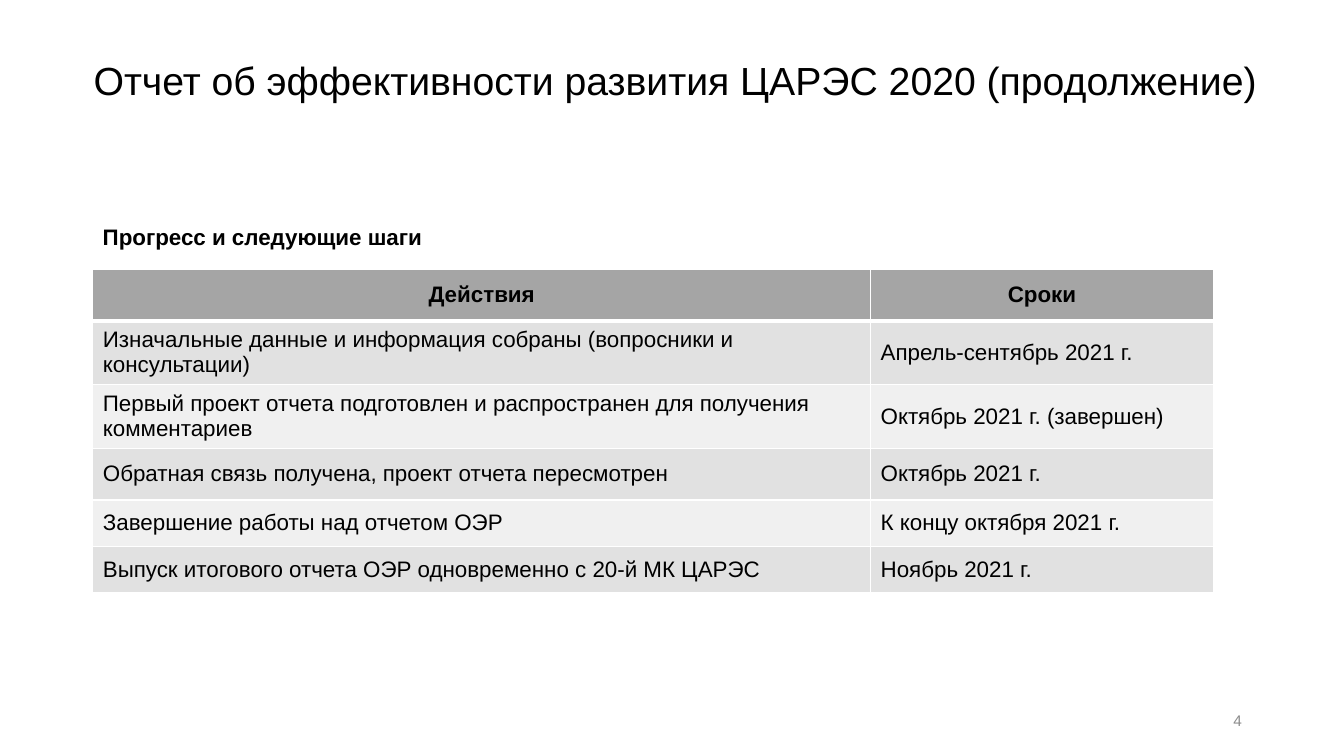
from lxml.etree import SubElement
from pptx import Presentation
from pptx.dml.color import RGBColor
from pptx.enum.text import MSO_ANCHOR as Anchor, PP_ALIGN as Align
from pptx.oxml.ns import qn
from pptx.util import Cm, Pt

BLACK = RGBColor(0x00, 0x00, 0x00)
WHITE = RGBColor(0xFF, 0xFF, 0xFF)
NUMBER_GRAY = RGBColor(0x8C, 0x8C, 0x8C)
HEADER_GRAY = RGBColor(0xA5, 0xA5, 0xA5)
BAND_GRAYS = (RGBColor(0xE1, 0xE1, 0xE1), RGBColor(0xF0, 0xF0, 0xF0))

STEPS = [
    ("Действия", "Сроки"),
    ("Изначальные данные и информация собраны (вопросники и консультации)",
     "Апрель-сентябрь 2021 г."),
    ("Первый проект отчета подготовлен и распространен для получения комментариев",
     "Октябрь 2021 г. (завершен)"),
    ("Обратная связь получена, проект отчета пересмотрен", "Октябрь 2021 г."),
    ("Завершение работы над отчетом ОЭР", "К концу октября 2021 г."),
    ("Выпуск итогового отчета ОЭР одновременно с 20-й МК ЦАРЭС", "Ноябрь 2021 г."),
]
COLUMN_WIDTHS = (19.6, 8.64)
ROW_HEIGHTS = (1.3, 1.3, 1.3, 1.3, 1.17, 1.17)


class ReportSlide:
    font_name = "Arial"
    body_size = 16

    def __init__(self, presentation):
        self.slide = presentation.slides.add_slide(presentation.slide_layouts[6])

    def style(self, paragraph, size, color=BLACK, bold=False, align=Align.LEFT):
        paragraph.alignment = align
        font = paragraph.font
        font.name, font.size, font.bold = self.font_name, Pt(size), bold
        font.color.rgb = color

    def text(self, words, left, top, width, height, size, anchor=Anchor.MIDDLE,
             line_spacing=1.0, **look):
        box = self.slide.shapes.add_textbox(Cm(left), Cm(top), Cm(width), Cm(height))
        frame = box.text_frame
        frame.word_wrap = True
        frame.vertical_anchor = anchor
        paragraph = frame.paragraphs[0]
        paragraph.text = words
        paragraph.line_spacing = line_spacing
        self.style(paragraph, size, **look)

    def borders(self, cell, bottom_width):
        """Draw white lines on all four sides of a cell."""
        properties = cell._tc.get_or_add_tcPr()
        for side, width in (("L", 1), ("R", 1), ("T", 1), ("B", bottom_width)):
            line = SubElement(properties, qn(f"a:ln{side}"), w=str(Pt(width)))
            fill = SubElement(line, qn("a:solidFill"))
            SubElement(fill, qn("a:srgbClr"), val=str(WHITE))

    def table(self, rows, left, top, column_widths, row_heights):
        table = self.slide.shapes.add_table(
            len(rows), len(column_widths), Cm(left), Cm(top),
            Cm(sum(column_widths)), Cm(sum(row_heights))).table
        for column, width in zip(table.columns, column_widths):
            column.width = Cm(width)
        for index, (row, height) in enumerate(zip(table.rows, row_heights)):
            row.height = Cm(height)
            header = index == 0
            for cell, words in zip(row.cells, rows[index]):
                self.borders(cell, 3 if header else 1)
                cell.fill.solid()
                cell.fill.fore_color.rgb = HEADER_GRAY if header else BAND_GRAYS[(index - 1) % 2]
                cell.vertical_anchor = Anchor.MIDDLE
                cell.text = words
                self.style(cell.text_frame.paragraphs[0], self.body_size, bold=header,
                           align=Align.CENTER if header else Align.LEFT)


def main():
    presentation = Presentation()
    presentation.slide_width, presentation.slide_height = Cm(33.87), Cm(19.05)
    report = ReportSlide(presentation)
    report.text("Отчет об эффективности развития ЦАРЭС 2020 (продолжение)",
                2.11, 0.76, 31.42, 2.67, size=28, line_spacing=0.9)
    report.text("4", 23.93, 17.65, 7.62, 1.02, size=11, color=NUMBER_GRAY, align=Align.RIGHT)
    report.table(STEPS, 2.34, 6.78, COLUMN_WIDTHS, ROW_HEIGHTS)
    report.text("Прогресс и следующие шаги", 2.34, 5.46, 16.92, 0.94, size=report.body_size,
                anchor=Anchor.TOP, line_spacing=1.07, bold=True, align=Align.JUSTIFY)
    presentation.save("out.pptx")


if __name__ == "__main__":
    main()
